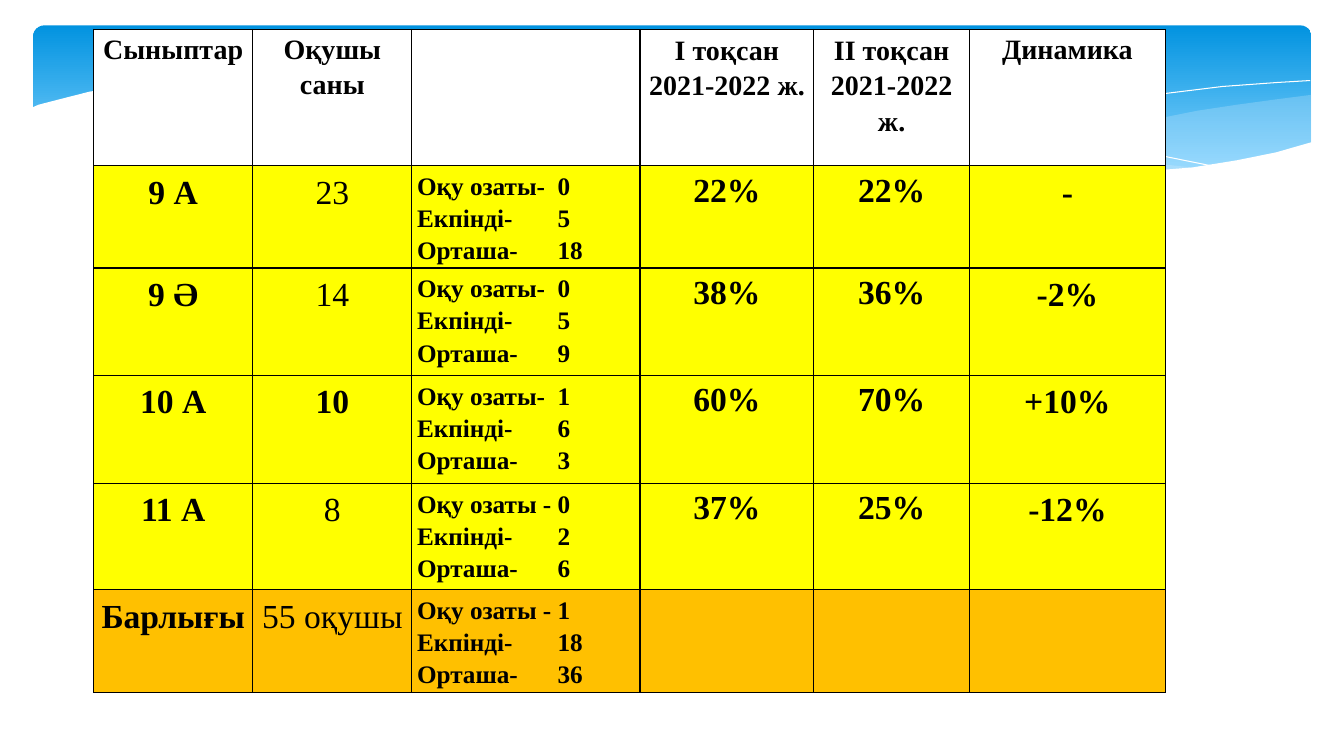
from dataclasses import dataclass

from lxml.etree import SubElement
from pptx import Presentation
from pptx.dml.color import RGBColor
from pptx.enum.shapes import MSO_SHAPE
from pptx.enum.text import PP_ALIGN
from pptx.oxml.ns import qn
from pptx.util import Cm, Pt

Points = list[tuple[float, float]]
FONT = "Times New Roman"
BLACK, WHITE, YELLOW, ORANGE = "000000", "FFFFFF", "FFFF00", "FFC000"
COUNT_TAB = Cm(3.54)


@dataclass
class Wave:
    points: Points
    fill: str | None = None
    opacity: int = 100


@dataclass
class GradeRow:
    height: float
    name: str
    pupils: str
    levels: str
    quarters: tuple[str, str]
    change: str
    fill: str = YELLOW
    bold_pupils: bool = False


WAVES = [
    Wave([(33.05, 2.39), (32.13, 2.51), (31.17, 2.64), (30.18, 2.79), (29.13, 3),
          (27.25, 3.33), (25.53, 3.63), (23.9, 3.86), (22.4, 4.06), (23.88, 4.17),
          (25.22, 4.29), (26.44, 4.34), (27.56, 4.37), (28.6, 4.34), (29.53, 4.29),
          (30.38, 4.19), (31.19, 4.06), (31.93, 3.91), (33.05, 3.61)], "C6E7FC", 29),
    Wave([(30.23, 4.24), (28.35, 4.04), (26.26, 3.78), (23.9, 3.4), (21.31, 2.95),
          (19.28, 2.59), (17.42, 2.34), (15.72, 2.18), (13.51, 2.03), (11.66, 2.03),
          (9.7, 2.18), (11.58, 2.39), (13.69, 2.69), (15.21, 2.95), (17.93, 3.43),
          (20.37, 3.81), (22.53, 4.09), (24.46, 4.27), (26.57, 4.37), (28.4, 4.37)],
         "C6E7FC", 40),
    Wave([(10.46, 2.29), (11.38, 2.16), (12.67, 2.08), (14.1, 2.06), (15.88, 2.11),
          (18.03, 2.24), (20.6, 2.49), (23.55, 2.9), (26.92, 3.45), (30.73, 4.22)]),
    Wave([(20.78, 3.84), (22.1, 3.58), (23.55, 3.3), (25.32, 2.97), (27.31, 2.64),
          (29.34, 2.36), (30.81, 2.18), (32.18, 2.08), (33.02, 2.03)]),
    Wave([(33.1, 3.57), (32.16, 3.84), (31.17, 4.04), (30.05, 4.22), (28.8, 4.32),
          (27.38, 4.34), (25.78, 4.32), (23.98, 4.19), (21.92, 3.96), (19.61, 3.66),
          (17.04, 3.25), (15.14, 2.9), (12.34, 2.44), (9.91, 2.16), (7.77, 2.01),
          (5.97, 1.98), (4.47, 2.06), (3.23, 2.16), (2.26, 2.31), (1.55, 2.49),
          (0.97, 2.64), (0.79, 2.72), (0.79, 5.69), (33.1, 5.69)], WHITE),
]

COLUMN_WIDTHS = [4.01, 4.01, 5.75, 4.38, 3.92, 4.94]
HEADER_HEIGHT = 3.43
HEADERS = ["Сыныптар", "Оқушы саны", "", "І тоқсан\n2021-2022 ж.",
           "ІІ тоқсан\n2021-2022 ж.", "Динамика"]
GRADES = [
    GradeRow(2.58, "9 А", "23", "Оқу озаты-\t0\nЕкпінді-\t5\nОрташа-\t18",
             ("22%", "22%"), "-"),
    GradeRow(2.7, "9 Ә", "14", "Оқу озаты-\t0\nЕкпінді-\t5\nОрташа-\t9",
             ("38%", "36%"), "-2%"),
    GradeRow(2.72, "10 А", "10", "Оқу озаты-\t1\nЕкпінді-\t6\nОрташа-\t3",
             ("60%", "70%"), "+10%", bold_pupils=True),
    GradeRow(2.68, "11 А", "8", "Оқу озаты - 0\nЕкпінді-\t2\nОрташа-\t6",
             ("37%", "25%"), "-12%"),
    GradeRow(2.55, "Барлығы", "55 оқушы", "Оқу озаты - 1\nЕкпінді-\t18\nОрташа-\t36",
             ("", ""), "", ORANGE),
]


def rgb(color: str) -> RGBColor:
    return RGBColor.from_string(color)


def add_banner(shapes) -> None:
    s = shapes.add_shape(MSO_SHAPE.ROUNDED_RECTANGLE, Cm(0.84), Cm(0.64), Cm(32.21), Cm(3.96))
    s.adjustments[0] = 0.07
    s.shadow.inherit = False
    s.line.fill.background()
    s.fill.gradient()
    s.fill.gradient_angle = 270
    for stop, position, color in zip(s.fill.gradient_stops, (0, 0.9), ("0293E0", "83D3FE")):
        stop.position = position
        stop.color.rgb = rgb(color)


def add_wave(shapes, wave: Wave) -> None:
    """Draw a filled wave, or a thin white curve if the wave has no fill."""
    (x, y), *rest = [(Cm(x), Cm(y)) for x, y in wave.points]
    builder = shapes.build_freeform(x, y)
    builder.add_line_segments(rest, close=wave.fill is not None)
    s = builder.convert_to_shape()
    s.shadow.inherit = False
    if wave.fill is None:
        s.fill.background()
        s.line.color.rgb = rgb(WHITE)
        s.line.width = Pt(0)
        return
    s.line.fill.background()
    s.fill.solid()
    s.fill.fore_color.rgb = rgb(wave.fill)
    if wave.opacity < 100:
        color = s.fill._xPr.find(f".//{qn('a:srgbClr')}")
        SubElement(color, qn("a:alpha"), val=str(wave.opacity * 1000))


def add_borders(cell) -> None:
    tc_pr = cell._tc.get_or_add_tcPr()
    for side in ("lnL", "lnR", "lnT", "lnB"):
        line = SubElement(tc_pr, qn(f"a:{side}"), w=str(Pt(1)))
        SubElement(SubElement(line, qn("a:solidFill")), qn("a:srgbClr"), val=BLACK)


def fill_cell(cell, text: str, fill: str, size: int, bold: bool = True,
              margins: tuple[float, float] = (0.13, 0.08), counts: bool = False) -> None:
    """Fill one cell; margins are the side and top ones, counts aligns numbers at a tab."""
    add_borders(cell)
    cell.fill.solid()
    cell.fill.fore_color.rgb = rgb(fill)
    cell.margin_left = cell.margin_right = Cm(margins[0])
    cell.margin_top = cell.margin_bottom = Cm(margins[1])
    tf = cell.text_frame
    tf.text = text
    for p in tf.paragraphs:
        p.alignment = PP_ALIGN.LEFT if counts else PP_ALIGN.CENTER
        p.line_spacing = 1.15
        if counts:
            tabs = SubElement(p._p.get_or_add_pPr(), qn("a:tabLst"))
            SubElement(tabs, qn("a:tab"), pos=str(COUNT_TAB), algn="l")
        p.font.name = FONT
        p.font.size = Pt(size)
        p.font.bold = bold
        p.font.color.rgb = rgb(BLACK)


def add_grades_table(shapes) -> None:
    heights = [HEADER_HEIGHT] + [grade.height for grade in GRADES]
    frame = shapes.add_table(len(heights), len(COLUMN_WIDTHS), Cm(2.36), Cm(0.74),
                             Cm(sum(COLUMN_WIDTHS)), Cm(sum(heights)))
    table = frame.table
    table.first_row = table.horz_banding = False
    for column, width in zip(table.columns, COLUMN_WIDTHS):
        column.width = Cm(width)
    for row, height in zip(table.rows, heights):
        row.height = Cm(height)

    for i, header in enumerate(HEADERS):
        margins = (0.03, 0.03) if i in (3, 4) else (0.1, 0)
        fill_cell(table.cell(0, i), header, WHITE, 20, margins=margins)
    for i, grade in enumerate(GRADES, 1):
        fill_cell(table.cell(i, 0), grade.name, grade.fill, 24)
        fill_cell(table.cell(i, 1), grade.pupils, grade.fill, 24, grade.bold_pupils)
        fill_cell(table.cell(i, 2), grade.levels, grade.fill, 18, counts=True)
        for j, percent in enumerate(grade.quarters, 3):
            fill_cell(table.cell(i, j), percent, grade.fill, 24, margins=(0.03, 0.03))
        fill_cell(table.cell(i, 5), grade.change, grade.fill, 24)


def main() -> None:
    prs = Presentation()
    prs.slide_width, prs.slide_height = Cm(33.87), Cm(19.05)
    shapes = prs.slides.add_slide(prs.slide_layouts[6]).shapes
    add_banner(shapes)
    for wave in WAVES:
        add_wave(shapes, wave)
    add_grades_table(shapes)
    prs.save("out.pptx")


if __name__ == "__main__":
    main()
